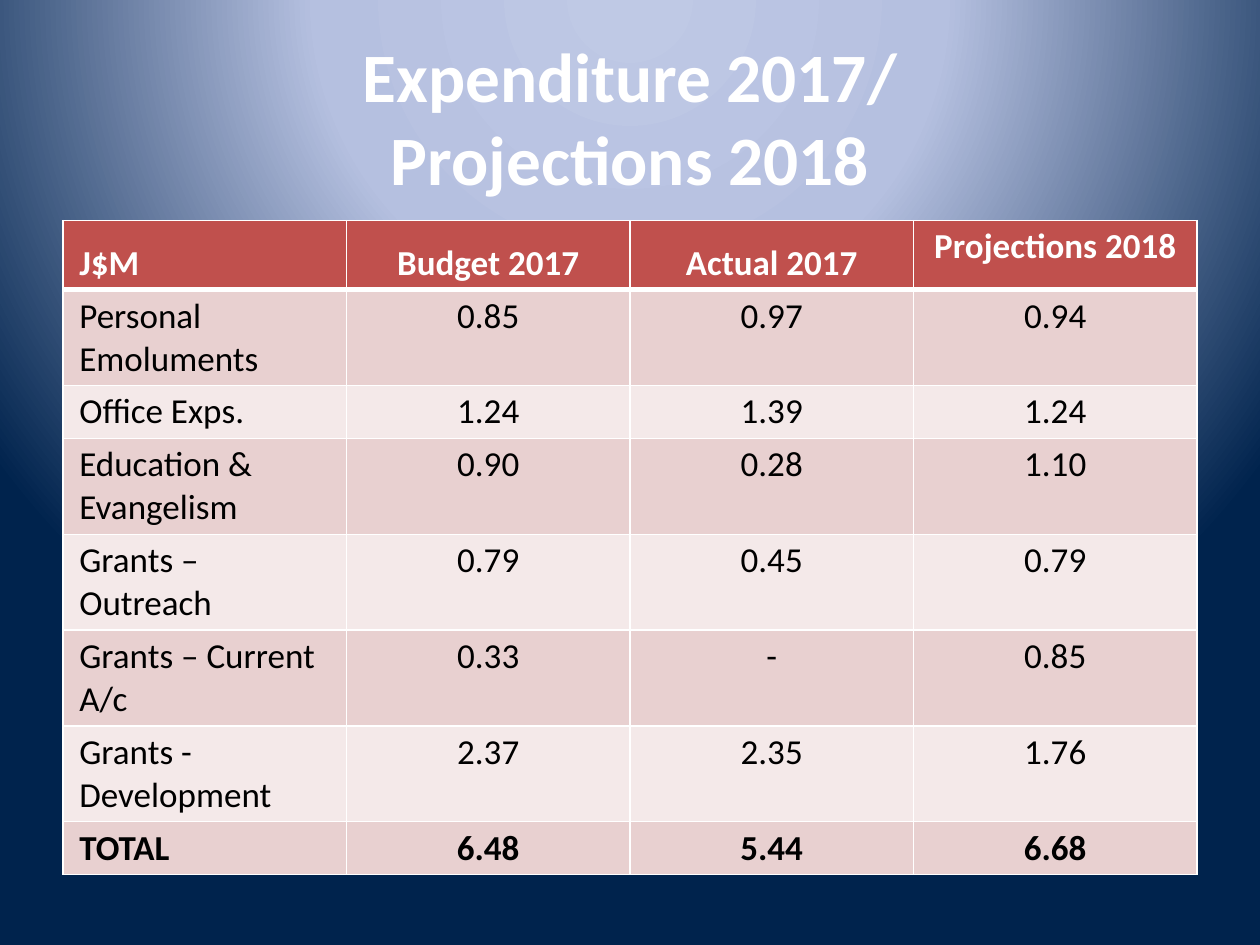
from lxml.etree import SubElement
from pptx import Presentation
from pptx.dml.color import RGBColor
from pptx.enum.text import MSO_ANCHOR, MSO_AUTO_SIZE, PP_ALIGN
from pptx.oxml.ns import qn
from pptx.util import Inches, Pt

TITLE = "Expenditure 2017/\vProjections 2018"
HEADER = ("J$M", "Budget 2017", "Actual 2017", "Projections 2018")
EXPENSES = [
    ("Personal Emoluments", "0.85", "0.97", "0.94"),
    ("Office Exps.", "1.24", "1.39", "1.24"),
    ("Education & Evangelism", "0.90", "0.28", "1.10"),
    ("Grants – Outreach", "0.79", "0.45", "0.79"),
    ("Grants – Current A/c", "0.33", "-", "0.85"),
    ("Grants - Development", "2.37", "2.35", "1.76"),
]
TOTAL = ("TOTAL", "6.48", "5.44", "6.68")
ROWS = [HEADER, *EXPENSES, TOTAL]
ROW_HEIGHTS = (0.55, 0.75, 0.41, 0.75, 0.75, 0.75, 0.75, 0.41)
BACKGROUND_STOPS = [(0, "BFC9E5"), (40, "B5C0E0"), (100, "00234D")]
BACKGROUND_CENTRE = {"l": 50, "t": -80, "r": 50, "b": 180}
WHITE, BLACK, RED = "FFFFFF", "000000", "C0504D"
BANDS = ("F4E9E9", "E8D0D0")


def color(value):
    return RGBColor.from_string(value)


def style_font(font, size, value, bold):
    font.name = "Calibri"
    font.size = Pt(size)
    font.bold = bold
    font.color.rgb = color(value)


def paint_background(slide):
    slide.background.fill.solid()
    properties = slide.element.find(".//" + qn("p:bgPr"))
    properties.remove(properties[0])
    gradient = properties.makeelement(qn("a:gradFill"), {"rotWithShape": "1"})
    properties.insert(0, gradient)
    stops = SubElement(gradient, qn("a:gsLst"))
    for position, value in BACKGROUND_STOPS:
        stop = SubElement(stops, qn("a:gs"), pos=str(position * 1000))
        SubElement(stop, qn("a:srgbClr"), val=value)
    shade = SubElement(gradient, qn("a:path"), path="circle")
    edges = {side: str(percent * 1000) for side, percent in BACKGROUND_CENTRE.items()}
    SubElement(shade, qn("a:fillToRect"), edges)


def set_borders(cell, bottom_width):
    properties = cell._tc.get_or_add_tcPr()
    widths = {"a:lnL": 1, "a:lnR": 1, "a:lnT": 1, "a:lnB": bottom_width}
    for index, (tag, width) in enumerate(widths.items()):
        line = properties.makeelement(qn(tag), {"w": str(Pt(width))})
        properties.insert(index, line)
        fill = SubElement(line, qn("a:solidFill"))
        SubElement(fill, qn("a:srgbClr"), val=WHITE)


def add_title(slide):
    title = slide.shapes.title
    title.left, title.top = Inches(0.5), Inches(0.3)
    title.width, title.height = Inches(9), Inches(1.25)
    frame = title.text_frame
    frame.text = TITLE
    frame.word_wrap = True
    frame.auto_size = MSO_AUTO_SIZE.NONE
    frame.vertical_anchor = MSO_ANCHOR.MIDDLE
    paragraph = frame.paragraphs[0]
    paragraph.alignment = PP_ALIGN.CENTER
    style_font(paragraph.font, 39.6, WHITE, True)


def add_expenditure_table(slide):
    table = slide.shapes.add_table(
        len(ROWS), len(HEADER), Inches(0.5), Inches(1.75),
        Inches(9), Inches(sum(ROW_HEIGHTS)),
    ).table
    for row_index, values in enumerate(ROWS):
        table.rows[row_index].height = Inches(ROW_HEIGHTS[row_index])
        is_header = values is HEADER
        for column_index, value in enumerate(values):
            cell = table.cell(row_index, column_index)
            cell.text = value
            cell.margin_left = cell.margin_right = Inches(0.13)
            cell.margin_top = cell.margin_bottom = Inches(0.04)
            at_bottom = is_header and column_index < len(HEADER) - 1
            cell.vertical_anchor = MSO_ANCHOR.BOTTOM if at_bottom else MSO_ANCHOR.TOP
            cell.fill.solid()
            cell.fill.fore_color.rgb = color(RED if is_header else BANDS[row_index % 2])
            set_borders(cell, 3 if is_header else 1)
            paragraph = cell.text_frame.paragraphs[0]
            paragraph.alignment = PP_ALIGN.CENTER if column_index else PP_ALIGN.LEFT
            style_font(paragraph.font, 20, WHITE if is_header else BLACK,
                       is_header or values is TOTAL)


def main():
    presentation = Presentation()
    presentation.slide_width, presentation.slide_height = Inches(10), Inches(7.5)
    slide = presentation.slides.add_slide(presentation.slide_layouts[5])
    paint_background(slide)
    add_title(slide)
    add_expenditure_table(slide)
    presentation.save("out.pptx")


if __name__ == "__main__":
    main()
